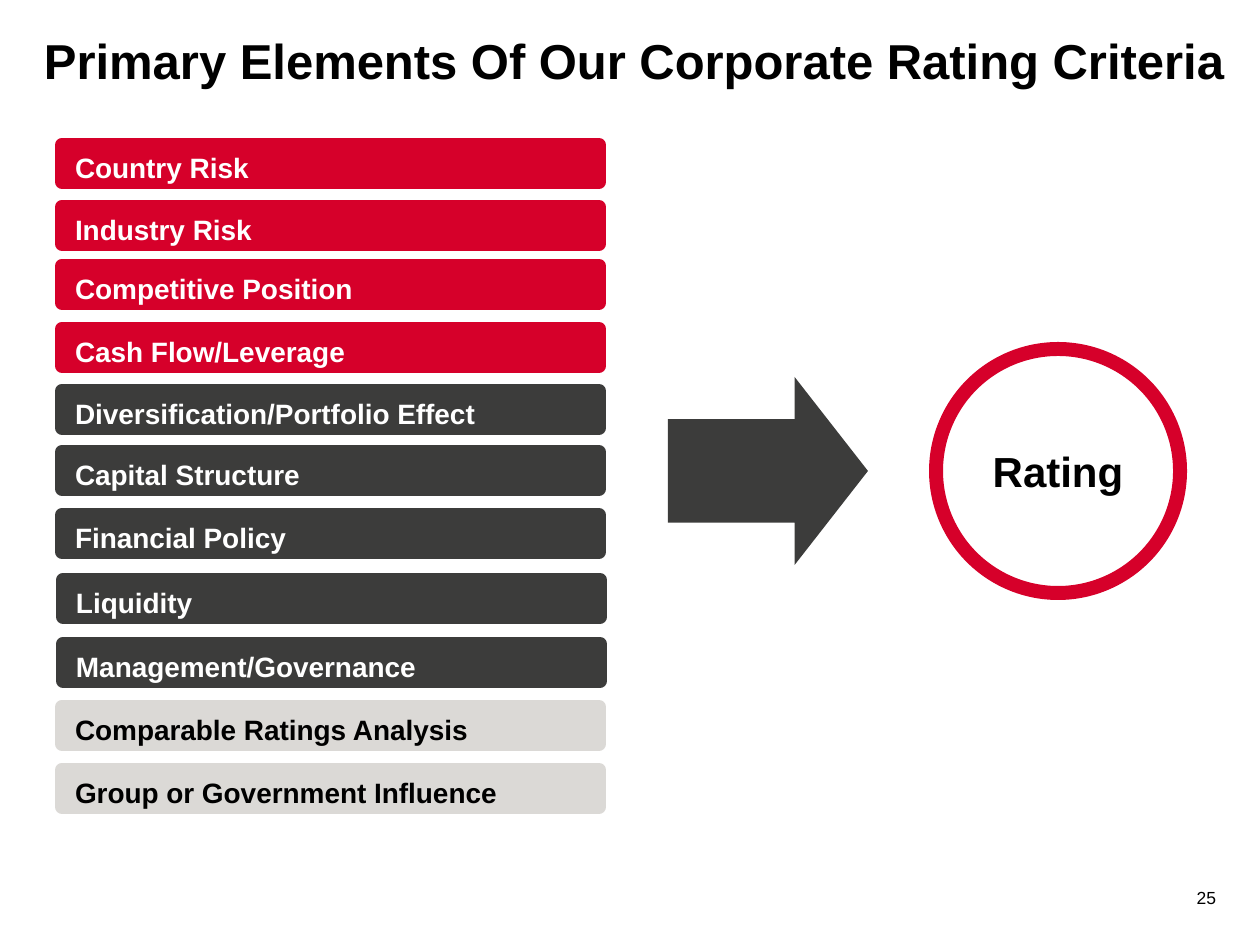
from dataclasses import dataclass
from pptx import Presentation
from pptx.dml.color import RGBColor
from pptx.enum.shapes import MSO_SHAPE
from pptx.enum.text import MSO_ANCHOR, PP_ALIGN
from pptx.util import Emu, Pt

COLORS = {"red": "D6002A", "dark": "3C3C3B", "pale": "DBD9D6",
          "black": "000000", "white": "FFFFFF"}
SCALE = 914400 / 126  # EMU in one px


@dataclass
class Bar:
    text: str
    top: int
    fill: str
    ink: str = "white"
    left: int = 62


BARS = [
    Bar("Country Risk", 145, "red"),
    Bar("Industry Risk", 207, "red"),
    Bar("Competitive Position", 266, "red"),
    Bar("Cash Flow/Leverage", 329, "red"),
    Bar("Diversification/Portfolio Effect", 391, "dark"),
    Bar("Capital Structure", 452, "dark"),
    Bar("Financial Policy", 515, "dark"),
    Bar("Liquidity", 580, "dark", left=63),
    Bar("Management/Governance", 644, "dark", left=63),
    Bar("Comparable Ratings Analysis", 707, "pale", "black"),
    Bar("Group or Government Influence", 770, "pale", "black"),
]


def px(num: int) -> Emu:
    return Emu(round(num * SCALE))


def color(name: str) -> RGBColor:
    return RGBColor.from_string(COLORS[name])


def write(shape, text: str, *, size: int, ink: str = "black", bold: bool = True,
          align=PP_ALIGN.LEFT, anchor=MSO_ANCHOR.TOP, inset=(0, 0, 0, 0),
          lead: float = 1.0) -> None:
    frame = shape.text_frame
    frame.word_wrap = True
    frame.vertical_anchor = anchor
    (frame.margin_left, frame.margin_top,
     frame.margin_right, frame.margin_bottom) = map(px, inset)
    para = frame.paragraphs[0]
    para.alignment = align
    para.line_spacing = lead
    run = para.add_run()
    run.text = text
    run.font.name = "Arial"
    run.font.size = Pt(size)
    run.font.bold = bold
    run.font.color.rgb = color(ink)


def label(slide, box: tuple[int, ...], text: str, **form) -> None:
    write(slide.shapes.add_textbox(*map(px, box)), text, **form)


def draw(slide, kind, box: tuple[int, ...], fill: str = "", line: str = ""):
    shape = slide.shapes.add_shape(kind, *map(px, box))
    shape.shadow.inherit = False
    if fill:
        shape.fill.solid()
        shape.fill.fore_color.rgb = color(fill)
    else:
        shape.fill.background()
    if line:
        shape.line.color.rgb = color(line)
        shape.line.width = Pt(8)
    else:
        shape.line.fill.background()
    return shape


def main() -> None:
    deck = Presentation()
    deck.slide_width, deck.slide_height = px(1260), px(945)
    slide = deck.slides.add_slide(deck.slide_layouts[6])

    # Title
    label(slide, (44, 30, 1197, 118),
          "Primary Elements Of Our Corporate Rating Criteria", size=28)

    # Rating circle and the arrow to it
    ring = draw(slide, MSO_SHAPE.OVAL, (936, 349, 244, 244), line="red")
    write(ring, "Rating", size=24, align=PP_ALIGN.CENTER,
          anchor=MSO_ANCHOR.MIDDLE)
    arrow = draw(slide, MSO_SHAPE.RIGHT_ARROW, (668, 377, 200, 188), fill="dark")
    arrow.adjustments[0] = 0.55
    arrow.adjustments[1] = 0.39

    # Criteria bars
    for bar in BARS:
        shape = draw(slide, MSO_SHAPE.RECTANGLE, (bar.left, bar.top, 537, 37),
                     fill=bar.fill, line=bar.fill)
        write(shape, bar.text, size=16, ink=bar.ink, anchor=MSO_ANCHOR.MIDDLE,
              inset=(13, 4, 25, 0), lead=1.1)

    # Page number
    label(slide, (1187, 887, 29, 35), "25", size=10, bold=False,
          align=PP_ALIGN.RIGHT)

    deck.save("out.pptx")


if __name__ == "__main__":
    main()
